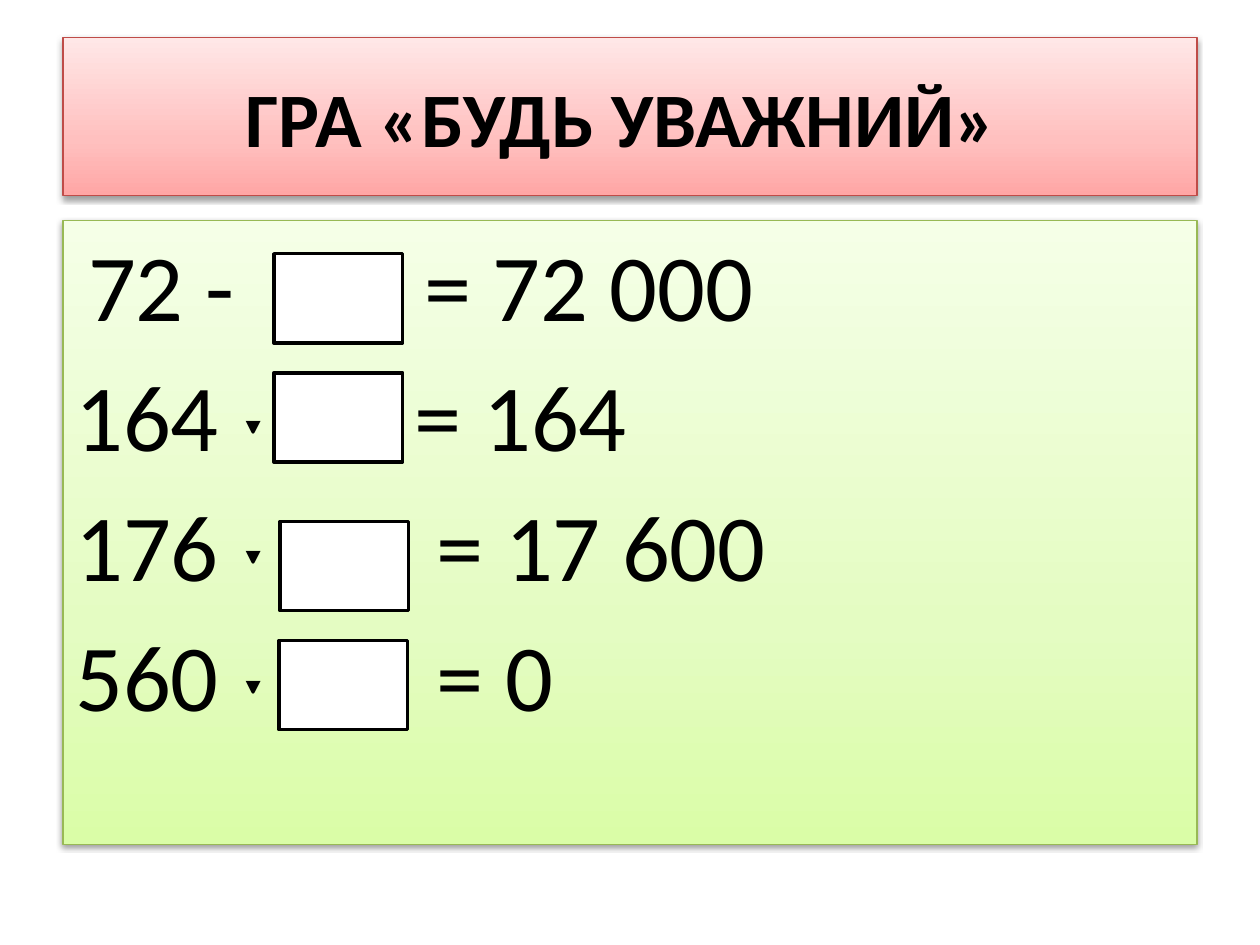
from copy import deepcopy

from lxml.etree import SubElement
from pptx import Presentation
from pptx.dml.color import RGBColor
from pptx.enum.shapes import MSO_SHAPE as Shape
from pptx.enum.text import MSO_ANCHOR as Anchor, PP_ALIGN as Align
from pptx.oxml.ns import qn
from pptx.util import Pt

BLACK = RGBColor(0x00, 0x00, 0x00)
WHITE = RGBColor(0xFF, 0xFF, 0xFF)
RED_LINE = RGBColor(0xBF, 0x4C, 0x48)
RED_SHADES = [RGBColor.from_string(code) for code in ("FFA6A5", "FFC0BF", "FFE7E7")]
GREEN_LINE = RGBColor(0x98, 0xB9, 0x55)
GREEN_SHADES = [RGBColor.from_string(code) for code in ("DAFDA7", "E4FCC2", "F5FFE7")]

EQUATIONS = [
    ("72 -\t= 72 000", 199.5),
    ("164 ˑ\t= 164", 194),
    ("176 ˑ\t= 17 600", 206.5),
    ("560 ˑ\t= 0", 206.5),
]
ANSWERS = [(156.5, 145), (156.5, 213), (160, 298), (159.5, 366)]


class Worksheet:
    """Draws panels, text and answer boxes on one slide in a shared style."""

    font = "Calibri"
    stops = (0, 0.35, 1)

    def __init__(self, deck):
        self.page = deck.slides.add_slide(deck.slide_layouts[6])

    def rectangle(self, left, top, width, height, line, weight):
        box = self.page.shapes.add_shape(
            Shape.RECTANGLE, Pt(left), Pt(top), Pt(width), Pt(height))
        box.shadow.inherit = False
        box.line.color.rgb = line
        box.line.width = Pt(weight)
        return box

    def panel(self, top, height, line, shades, anchor):
        box = self.rectangle(36, top, 648, height, line, 0.75)
        box.fill.gradient()
        box.fill.gradient_angle = 90
        stop_list = box.element.spPr.find(".//" + qn("a:gsLst"))
        stop_list.insert(1, deepcopy(stop_list[0]))
        for stop, position, shade in zip(box.fill.gradient_stops, self.stops, shades):
            stop.position = position
            stop.color.rgb = shade
        self.shadow(box)
        box.text_frame.word_wrap = True
        box.text_frame.vertical_anchor = anchor
        return box

    def shadow(self, box):
        effects = box.element.spPr.find(qn("a:effectLst"))
        outer = SubElement(effects, qn("a:outerShdw"), blurRad=str(Pt(3.1)),
                           dist=str(Pt(1.6)), dir="5400000", rotWithShape="0")
        color = SubElement(outer, qn("a:srgbClr"), val=str(BLACK))
        SubElement(color, qn("a:alpha"), val="38000")

    def add_text(self, para, text, size, bold=False):
        span = para.add_run()
        span.text = text
        span.font.color.rgb = BLACK
        values = {"name": self.font, "size": Pt(size), "bold": bold}
        for name, value in values.items():
            setattr(span.font, name, value)

    def title(self, text):
        box = self.panel(21.6, 90, RED_LINE, RED_SHADES, Anchor.MIDDLE)
        para = box.text_frame.paragraphs[0]
        para.alignment = Align.CENTER
        self.add_text(para, text, 44, bold=True)

    def equations(self, rows):
        frame = self.panel(126, 356.4, GREEN_LINE, GREEN_SHADES, Anchor.TOP).text_frame
        for index, (text, equals_at) in enumerate(rows):
            para = frame.add_paragraph() if index else frame.paragraphs[0]
            para.alignment = Align.LEFT
            para.space_before = Pt(9.5)
            tabs = SubElement(para._p.get_or_add_pPr(), qn("a:tabLst"))
            SubElement(tabs, qn("a:tab"), pos=str(Pt(equals_at)), algn="l")
            if index == 0:
                self.add_text(para, " ", 32)
            self.add_text(para, text, 54)

    def answer(self, left, top):
        box = self.rectangle(left, top, 73.5, 51, BLACK, 2)
        box.fill.solid()
        box.fill.fore_color.rgb = WHITE


def main():
    deck = Presentation()
    deck.slide_width, deck.slide_height = Pt(720), Pt(540)
    sheet = Worksheet(deck)
    sheet.title("ГРА «БУДЬ УВАЖНИЙ» ")
    sheet.equations(EQUATIONS)
    for left, top in ANSWERS:
        sheet.answer(left, top)
    deck.save("out.pptx")


if __name__ == "__main__":
    main()
